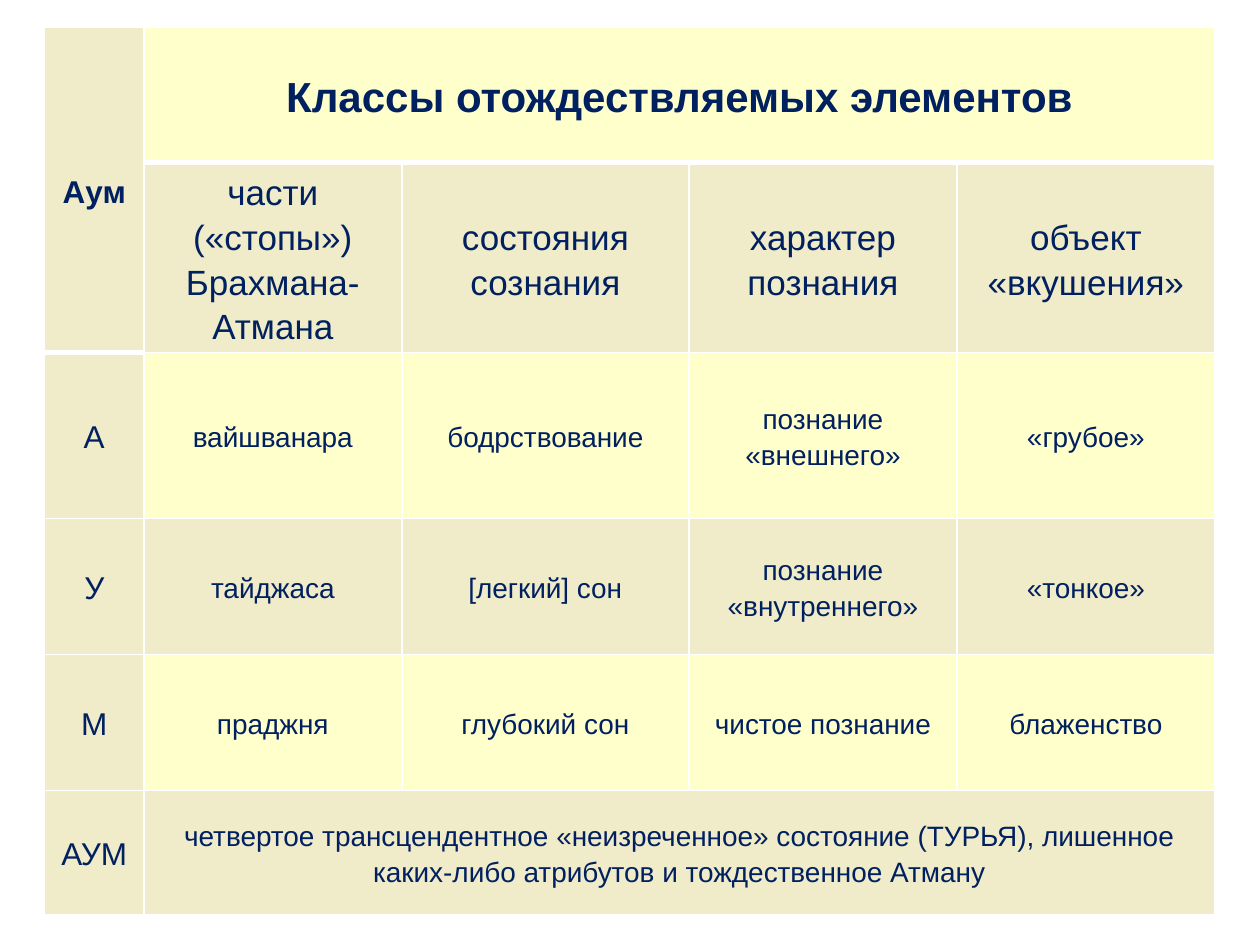
from dataclasses import dataclass
from lxml import etree
from pptx import Presentation
from pptx.dml.color import RGBColor
from pptx.enum.text import MSO_ANCHOR, PP_ALIGN
from pptx.oxml.ns import qn
from pptx.util import Cm, Pt

MID = MSO_ANCHOR.MIDDLE
CENTER = PP_ALIGN.CENTER


@dataclass
class Theme:
    font: str = "Arial"
    ink: str = "002060"
    sand: str = "F0EBC8"
    cream: str = "FFFFCC"
    line: str = "FFFFFF"
    title: int = 24
    head: int = 20
    label: int = 18
    text: int = 16
    thin: int = 1
    thick: int = 3


theme = Theme()


def write(cell, text, size, bold=False):
    cell.text = text
    for para in cell.text_frame.paragraphs:
        para.alignment = CENTER
        para.line_spacing = 1.15
        for run in para.runs:
            font = run.font
            font.name = theme.font
            font.size = Pt(size)
            font.bold = bold
            font.color.rgb = RGBColor.from_string(theme.ink)


def border(cell, sides):
    props = cell._tc.get_or_add_tcPr()
    for spot, (side, width) in enumerate(sides.items()):
        line = etree.Element(qn(f"a:ln{side}"), w=str(Pt(width)))
        fill = etree.SubElement(line, qn("a:solidFill"))
        etree.SubElement(fill, qn("a:srgbClr"), val=theme.line)
        props.insert(spot, line)


rows = [
    ["Аум", "Классы отождествляемых элементов", "", "", ""],
    ["", "части («стопы») Брахмана-\nАтмана", "состояния сознания",
     "характер познания", "объект «вкушения»"],
    ["А", "вайшванара", "бодрствование", "познание «внешнего»", "«грубое»"],
    ["У", "тайджаса", "[легкий] сон", "познание «внутреннего»", "«тонкое»"],
    ["М", "праджня", "глубокий сон", "чистое познание", "блаженство"],
    ["АУМ", "четвертое трансцендентное «неизреченное» состояние (ТУРЬЯ), "
     "лишенное каких-либо атрибутов и тождественное Атману", "", "", ""],
]
widths = [2, 5.2, 5.79, 5.4, 5.2]
heights = [2.74, 3.71, 3.35, 2.74, 2.74, 2.5]
sizes = [theme.title, theme.head] + [theme.text] * 4
heavy = {(0, 0), (1, 0), (0, 1), (0, 2), (0, 3), (0, 4)}

deck = Presentation()
deck.slide_width = Cm(25.4)
deck.slide_height = Cm(19.05)
slide = deck.slides.add_slide(deck.slide_layouts[6])
table = slide.shapes.add_table(len(rows), len(widths), Cm(0.9), Cm(0.54),
                               Cm(sum(widths)), Cm(sum(heights))).table
for col, width in zip(table.columns, widths):
    col.width = Cm(width)
for row, height in zip(table.rows, heights):
    row.height = Cm(height)

for r, row in enumerate(rows):
    for c, text in enumerate(row):
        cell = table.cell(r, c)
        cell.vertical_anchor = MID
        cell.margin_left = cell.margin_right = Cm(0.1)
        cell.margin_top = cell.margin_bottom = Cm(0.1)
        cell.fill.solid()
        shade = theme.sand if c == 0 or r % 2 else theme.cream
        cell.fill.fore_color.rgb = RGBColor.from_string(shade)
        top = theme.thick if (r - 1, c) in heavy else theme.thin
        base = theme.thick if (r, c) in heavy else theme.thin
        border(cell, {"L": theme.thin, "R": theme.thin, "T": top, "B": base})
        size = theme.label if c == 0 else sizes[r]
        write(cell, text, size, bold=r == 0)

table.cell(0, 0).merge(table.cell(1, 0))
for r in (0, 5):
    table.cell(r, 1).merge(table.cell(r, 4))

deck.save("out.pptx")
